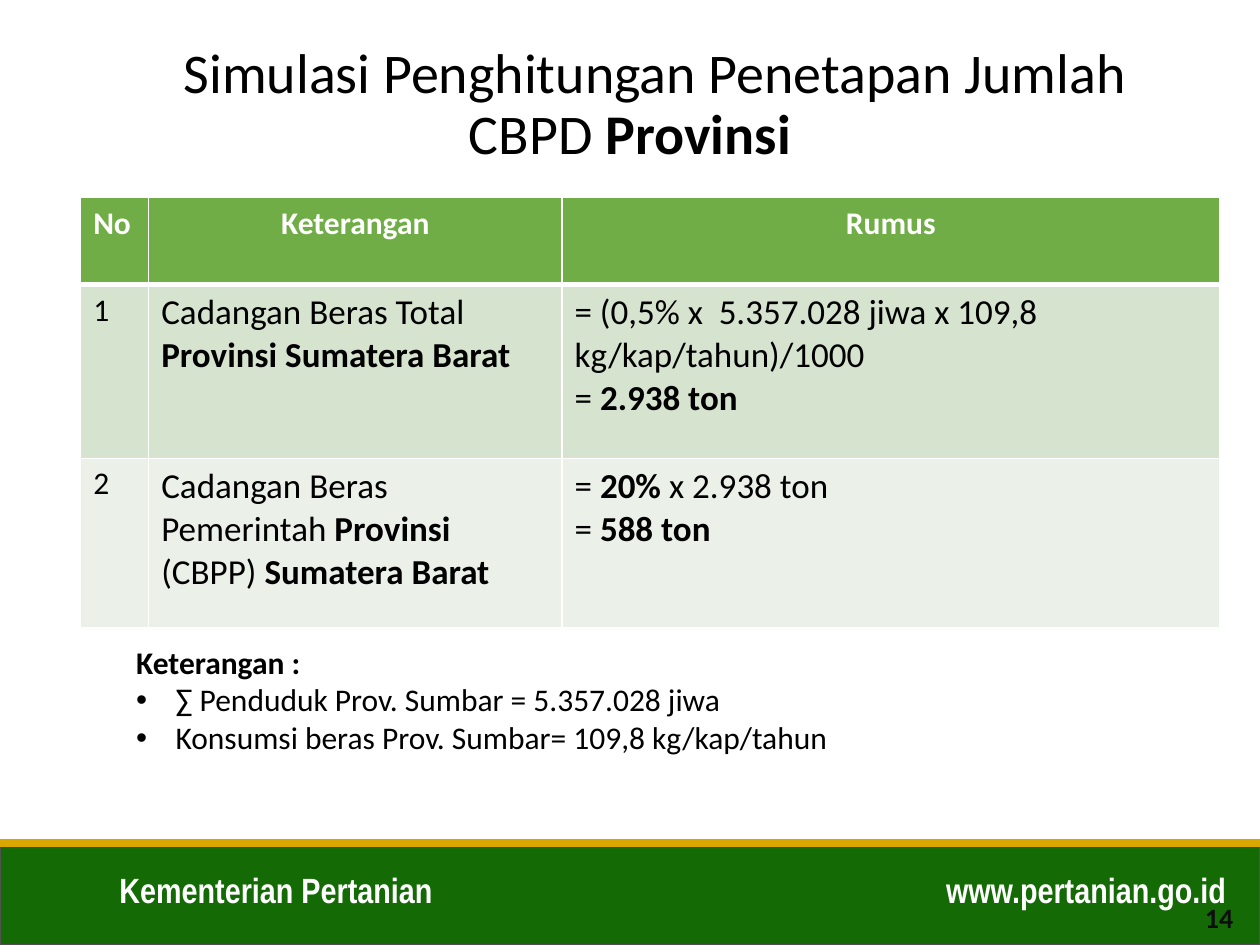
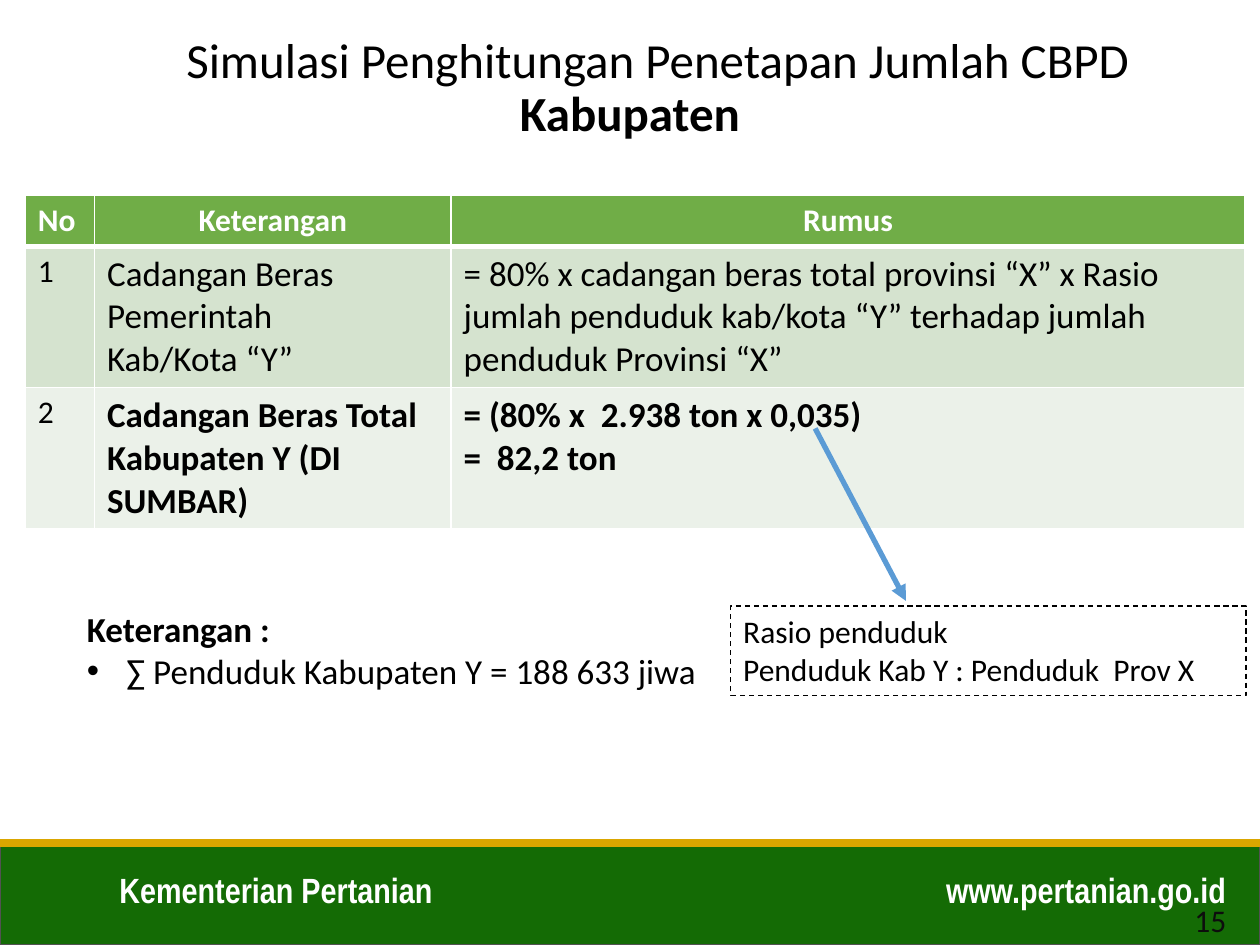
"""Build two slides that work out the rice reserve of a province and a regency."""
from dataclasses import dataclass
from typing import Any, Optional

import lxml.etree
import pptx
import pptx.dml.color
import pptx.enum.dml
import pptx.enum.shapes
import pptx.enum.text
import pptx.oxml.ns
import pptx.util

Pt = pptx.util.Pt
Align = pptx.enum.text.PP_ALIGN
Anchor = pptx.enum.text.MSO_ANCHOR
Shape = pptx.enum.shapes.MSO_SHAPE
Link = pptx.enum.shapes.MSO_CONNECTOR
Box = tuple[float, float, float, float]
qn = pptx.oxml.ns.qn


@dataclass(frozen=True)
class Theme:
    font: str = "Calibri"
    narrow: str = "Arial Narrow"
    white: str = "FFFFFF"
    black: str = "000000"
    ink: str = "0D0D0D"
    green: str = "146B05"
    edge: str = "525252"
    gold: str = "DAA600"
    head: str = "70AD47"
    rows: tuple[str, str] = ("D5E3CF", "EBF1E9")
    blue: str = "5B9BD5"
    text: float = 18
    large: float = 20


@dataclass(frozen=True)
class Grid:
    left: float
    top: float
    cols: tuple[float, ...]
    rows: tuple[float, ...]
    cells: list[list[list[str]]]


@dataclass(frozen=True)
class Page:
    title: str
    place: Box
    size: float
    shift: float
    grid: Grid
    notes: list[str]
    area: Box
    scale: float
    number: str
    spot: Box
    digit: float


THEME = Theme()
HEADS = ["No", "Keterangan", "Rumus"]

PAGES = [
    Page(
        title="Simulasi Penghitungan Penetapan Jumlah CBPD **Provinsi**",
        place=(49.7, 17.3, 620.6, 86.4), size=32, shift=29,
        grid=Grid(46.1, 113, (38.9, 236.2, 375.8), (49.7, 99.4, 96.5), [
            [["1"],
             ["Cadangan Beras Total **Provinsi Sumatera Barat**"],
             ["= (0,5% x  5.357.028 jiwa x 109,8 kg/kap/tahun)/1000",
              "= **2.938 ton**"]],
            [["2"],
             ["Cadangan Beras Pemerintah **Provinsi **(CBPP) **Sumatera Barat**"],
             ["= **20% **x 2.938 ton", "= **588 ton**"]],
        ]),
        notes=["∑ Penduduk Prov. Sumbar = 5.357.028 jiwa",
               "Konsumsi beras Prov. Sumbar= 109,8 kg/kap/tahun"],
        area=(70.6, 363.6, 571.7, 72.7), scale=18,
        number="**14**", spot=(676.8, 511.2, 39.6, 26.6), digit=16,
    ),
    Page(
        title="Simulasi Penghitungan Penetapan Jumlah CBPD **Kabupaten**",
        place=(33.8, 17.3, 652.3, 67.7), size=28, shift=31.6,
        grid=Grid(14.4, 111.6, (39.6, 203.8, 453.6), (26.6, 80.6, 77.8), [
            [["1"],
             ["Cadangan Beras Pemerintah", "Kab/Kota “Y”"],
             ["= 80% x cadangan beras total provinsi “X” x Rasio jumlah "
              "penduduk kab/kota “Y” terhadap jumlah penduduk Provinsi “X”"]],
            [["2"],
             ["**Cadangan Beras Total Kabupaten Y (DI SUMBAR)**"],
             ["**= (80% x  2.938 ton x 0,035)**", "**=  82,2 ton**"]],
        ]),
        notes=["∑ Penduduk Kabupaten Y = 188 633 jiwa"],
        area=(42.5, 343.4, 623.5, 55.4), scale=20,
        number="15", spot=(671.8, 511.2, 39.6, 28.8), digit=18,
    ),
]


def tint(code: str) -> pptx.dml.color.RGBColor:
    return pptx.dml.color.RGBColor.from_string(code)


def write(frame: Any, lines: list[str], *, size: float, color: str = THEME.black,
          font: str = THEME.font, align: Any = Align.LEFT, shift: float = 0,
          space: float = 1, dots: Optional[int] = None, hang: float = 22.5,
          anchor: Any = Anchor.TOP) -> None:
    frame.word_wrap = True
    frame.auto_size = pptx.enum.text.MSO_AUTO_SIZE.NONE
    frame.vertical_anchor = anchor
    fill_lines(frame, lines, size, color, font, align, shift, space, dots, hang)


def fill_lines(frame: Any, lines: list[str], size: float, color: str = THEME.black,
               font: str = THEME.font, align: Any = Align.LEFT, shift: float = 0,
               space: float = 1, dots: Optional[int] = None, hang: float = 22.5) -> None:
    for index, line in enumerate(lines):
        para = frame.paragraphs[0] if index == 0 else frame.add_paragraph()
        props = para._p.get_or_add_pPr()
        dot = dots is not None and index >= dots
        props.set("marL", str(Pt(hang) if dot else 0))
        props.set("indent", str(Pt(-hang if dot else shift)))
        if dot:
            lxml.etree.SubElement(props, qn("a:buChar"), char="•")
        else:
            lxml.etree.SubElement(props, qn("a:buNone"))
        para.alignment = align
        para.line_spacing = space
        para.space_before = Pt(0)
        for part, text in enumerate(line.split("**")):
            if text:
                run = para.add_run()
                run.text = text
                run.font.name = font
                run.font.size = Pt(size)
                run.font.bold = part % 2 == 1
                run.font.color.rgb = tint(color)


def move(shape: Any, box: Box) -> None:
    shape.left, shape.top, shape.width, shape.height = map(Pt, box)


def label(slide: Any, box: Box, text: str, **style: Any) -> Any:
    shape = slide.shapes.add_textbox(*map(Pt, box))
    write(shape.text_frame, [text], **style)
    return shape


def panel(slide: Any, box: Box, line: str, width: float,
          fill: Optional[str] = None) -> Any:
    shape = slide.shapes.add_shape(Shape.RECTANGLE, *map(Pt, box))
    shape.shadow.inherit = False
    if fill:
        shape.fill.solid()
        shape.fill.fore_color.rgb = tint(fill)
    else:
        shape.fill.background()
    shape.line.color.rgb = tint(line)
    shape.line.width = Pt(width)
    return shape


def rule(slide: Any, ends: Box, color: str, width: float, arrow: bool = False) -> Any:
    line = slide.shapes.add_connector(Link.STRAIGHT, *map(Pt, ends))
    line.line.color.rgb = tint(color)
    line.line.width = Pt(width)
    props = line.element.spPr
    if arrow:
        lxml.etree.SubElement(props.find(qn("a:ln")), qn("a:tailEnd"), type="triangle")
    lxml.etree.SubElement(props, qn("a:effectLst"))
    return line


def brand(deck: Any, slide: Any, layout: Any) -> None:
    top, wide, high = 481.7, 720, 540
    style = dict(size=THEME.large, color=THEME.white, font=THEME.narrow)
    parts = [
        panel(slide, (0, top, wide, high - top), THEME.edge, 1, THEME.green),
        label(slide, (61.2, 492.5, 263.5, 31.7), "**Kementerian Pertanian**", **style),
        label(slide, (507.6, 492.5, 200.2, 31.7), "**www.pertanian.go.id**",
              align=Align.RIGHT, **style),
        rule(slide, (0, top, wide, top), THEME.gold, 4.5),
    ]
    for mark, part in enumerate(parts, 101):
        part.element.xpath(".//p:cNvPr")[0].set("id", str(mark))
        layout.shapes.element.append(part.element)


def border(cell: Any, row: int) -> None:
    props = cell._tc.get_or_add_tcPr()
    widths = {"L": 1, "R": 1, "T": 3 if row == 1 else 1, "B": 3 if row == 0 else 1}
    for side, width in widths.items():
        line = lxml.etree.SubElement(props, qn(f"a:ln{side}"), w=str(Pt(width)))
        fill = lxml.etree.SubElement(line, qn("a:solidFill"))
        lxml.etree.SubElement(fill, qn("a:srgbClr"), val=THEME.white)


def chart_out(slide: Any, grid: Grid) -> None:
    cells = [[[f"**{head}**"] for head in HEADS]] + grid.cells
    box = (grid.left, grid.top, sum(grid.cols), sum(grid.rows))
    table = slide.shapes.add_table(len(cells), len(HEADS), *map(Pt, box)).table
    for col, width in zip(table.columns, grid.cols):
        col.width = Pt(width)
    for row, height in zip(table.rows, grid.rows):
        row.height = Pt(height)
    for y, row in enumerate(cells):
        for x, lines in enumerate(row):
            cell = table.cell(y, x)
            border(cell, y)
            cell.fill.solid()
            cell.fill.fore_color.rgb = tint(THEME.rows[y - 1] if y else THEME.head)
            fill_lines(cell.text_frame, lines,
                       size=THEME.large if x and y else THEME.text,
                       color=THEME.black if y else THEME.white,
                       align=Align.CENTER if x and not y else Align.LEFT)


def draw(slide: Any, page: Page) -> None:
    title, body = slide.shapes.title, slide.placeholders[1]
    move(title, page.place)
    write(title.text_frame, [page.title], size=page.size, align=Align.CENTER,
          shift=page.shift, space=0.9, anchor=Anchor.MIDDLE)
    chart_out(slide, page.grid)
    move(body, page.area)
    write(body.text_frame, ["**Keterangan :**", *page.notes], size=page.scale, dots=1)
    label(slide, page.spot, page.number, size=page.digit, color=THEME.ink,
          align=Align.CENTER)


def ratio(slide: Any) -> None:
    rule(slide, (465.8, 244.8, 517.7, 343.4), THEME.blue, 3, arrow=True)
    shape = panel(slide, (417.6, 346.3, 294.5, 51.1), THEME.black, 0.75)
    shape.line.dash_style = pptx.enum.dml.MSO_LINE.DASH
    write(shape.text_frame, ["Rasio penduduk", "Penduduk Kab Y : Penduduk  Prov X"],
          size=THEME.text)


def main() -> None:
    deck = pptx.Presentation()
    deck.slide_width, deck.slide_height = Pt(720), Pt(540)
    layout = deck.slide_layouts[1]
    slides = [deck.slides.add_slide(layout) for _ in PAGES]
    brand(deck, slides[0], layout)
    for slide, page in zip(slides, PAGES):
        draw(slide, page)
    ratio(slides[1])
    deck.save("out.pptx")


if __name__ == "__main__":
    main()
